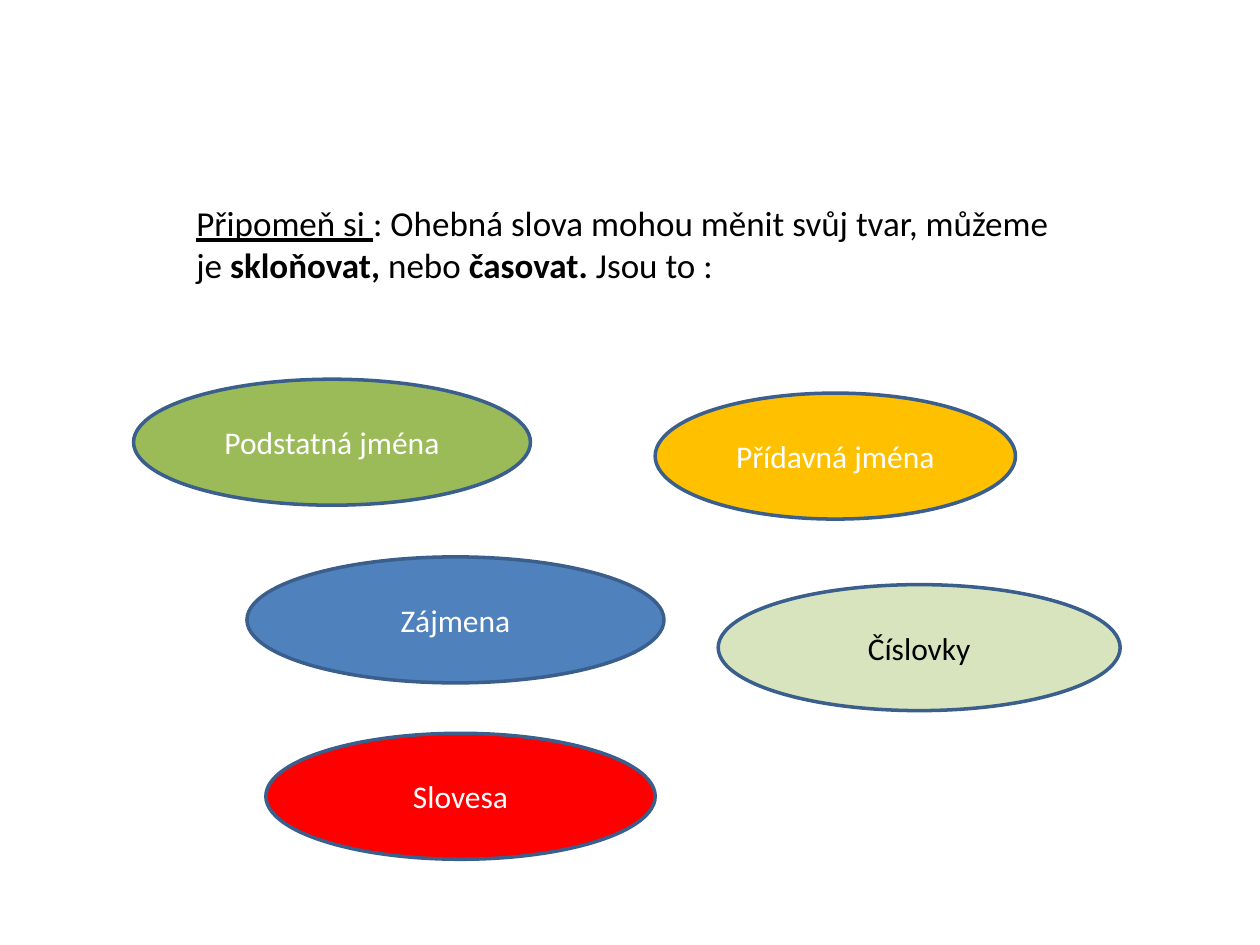
from pptx import Presentation
from pptx.dml.color import RGBColor
from pptx.enum.shapes import MSO_SHAPE
from pptx.enum.text import MSO_ANCHOR, MSO_AUTO_SIZE, PP_ALIGN
from pptx.util import Inches, Pt

OVAL = MSO_SHAPE.OVAL
MIDDLE = MSO_ANCHOR.MIDDLE
CENTER = PP_ALIGN.CENTER
GROW = MSO_AUTO_SIZE.SHAPE_TO_FIT_TEXT

FONT = "Calibri"
BLACK = "000000"
WHITE = "FFFFFF"
EDGE = "3A5F8C"

LINES = [
    [("Připomeň si ", "line"), (": Ohebná slova mohou měnit svůj tvar, můžeme", "")],
    [("je ", ""), ("skloňovat,", "bold"), (" nebo ", ""),
     ("časovat. ", "bold"), ("Jsou to :", "")],
]
WORDS = [
    ("Zájmena", 1.96, 4.42, 3.31, "4F81BD", WHITE),
    ("Podstatná jména", 1.06, 3.01, 3.15, "9BBB59", WHITE),
    ("Přídavná jména", 5.2, 3.12, 2.86, "FFC000", WHITE),
    ("Slovesa", 2.11, 5.82, 3.09, "FF0000", WHITE),
    ("Číslovky", 5.7, 4.64, 3.19, "D7E4BD", BLACK),
]


def color(code):
    return RGBColor.from_string(code)


def set_font(para, size, code):
    para.font.name = FONT
    para.font.size = Pt(size)
    para.font.color.rgb = color(code)


def add_intro(slide, left, top, width, height):
    frame = slide.shapes.add_textbox(left, top, width, height).text_frame
    frame.word_wrap = False
    frame.auto_size = GROW
    for index, parts in enumerate(LINES):
        para = frame.add_paragraph() if index else frame.paragraphs[0]
        set_font(para, 20, BLACK)
        for text, style in parts:
            run = para.add_run()
            run.text = text
            if style == "bold":
                run.font.bold = True
            elif style == "line":
                run.font.underline = True


def add_word(slide, left, top, width, height, text, fill, ink):
    oval = slide.shapes.add_shape(OVAL, left, top, width, height)
    oval.shadow.inherit = False
    oval.fill.solid()
    oval.fill.fore_color.rgb = color(fill)
    oval.line.color.rgb = color(EDGE)
    oval.line.width = Pt(2)
    frame = oval.text_frame
    frame.word_wrap = True
    frame.vertical_anchor = MIDDLE
    para = frame.paragraphs[0]
    para.text = text
    para.alignment = CENTER
    set_font(para, 18, ink)


def main():
    deck = Presentation()
    deck.slide_width = Inches(10)
    deck.slide_height = Inches(7.5)
    slide = deck.slides.add_slide(deck.slide_layouts[6])
    add_intro(slide, Inches(1.46), Inches(1.55), Inches(7.09), Inches(0.77))
    for text, left, top, width, fill, ink in WORDS:
        add_word(slide, Inches(left), Inches(top), Inches(width), Inches(1),
                 text, fill, ink)
    deck.save("out.pptx")


if __name__ == "__main__":
    main()
